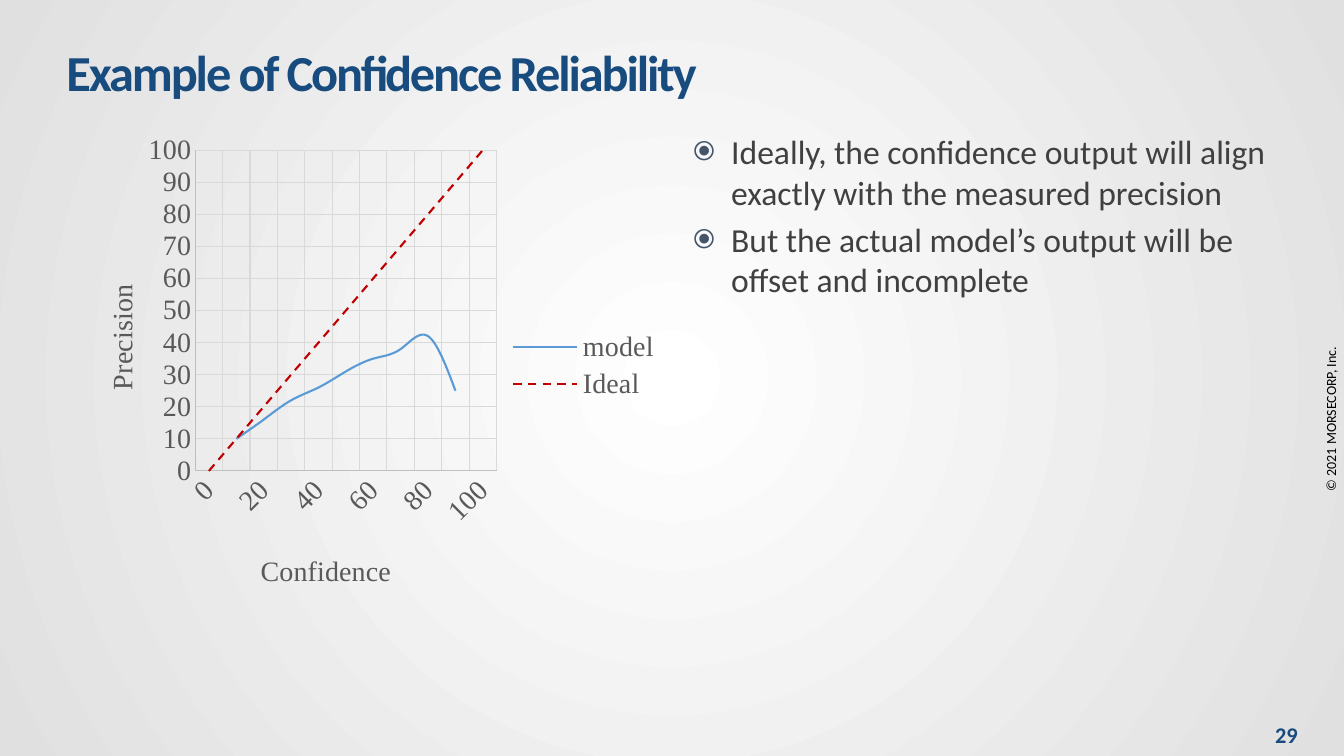
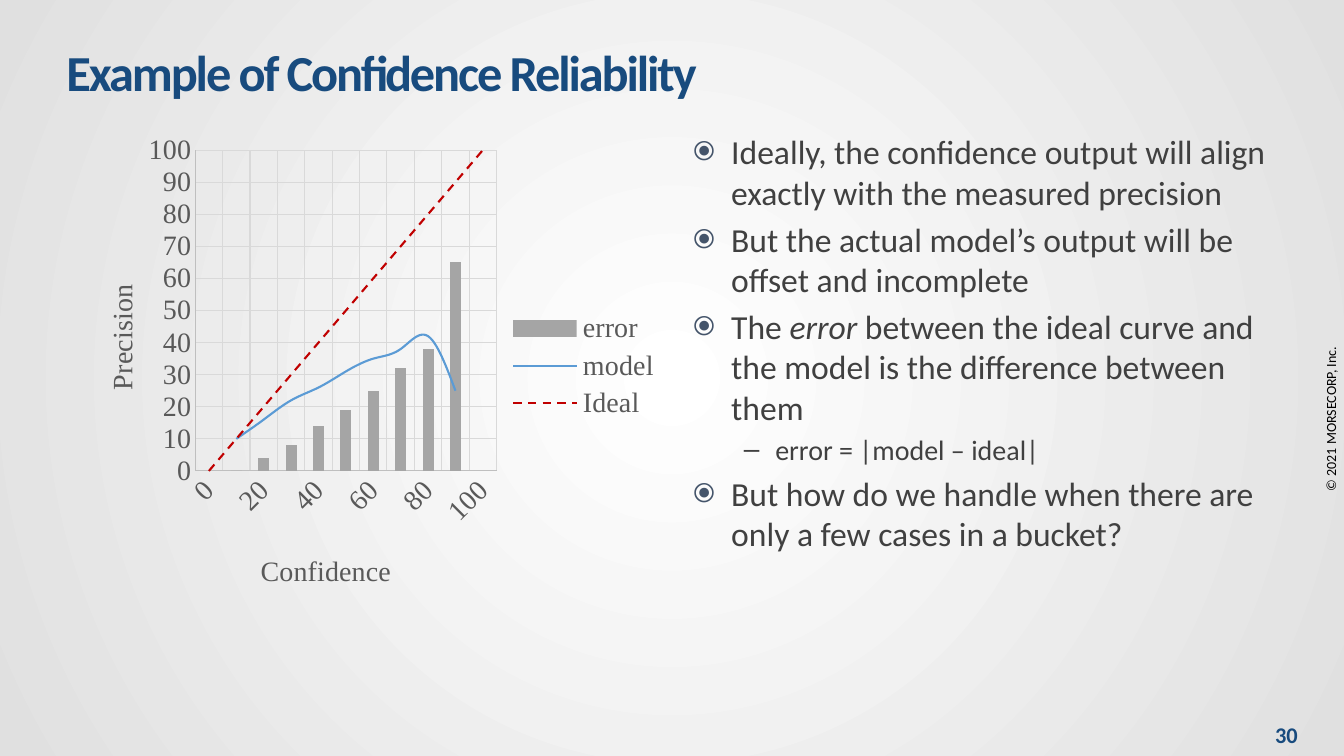
import pptx
import pptx.chart.data
import pptx.dml.color
import pptx.enum.chart
import pptx.enum.dml
import pptx.enum.text
import pptx.oxml
import pptx.oxml.ns
import pptx.util
from lxml import etree

Cm = pptx.util.Cm
Pt = pptx.util.Pt
qn = pptx.oxml.ns.qn
ALIGN = pptx.enum.text.PP_ALIGN
MIDDLE = pptx.enum.text.MSO_ANCHOR.MIDDLE

SANS = "Calibri"
SERIF = "Times New Roman"
NAVY = "184B7E"
SLATE = "44546A"
DARK = "404040"
GREY = "595959"
AXIS = "BFBFBF"
GRID = "D9D9D9"

TITLE = "Example of Confidence Reliability"
RIGHTS = "© 2021 MORSECORP, Inc."

CATS = [str(step) for step in range(0, 101, 10)]
ERROR = ("error", [None, 0, 4, 8, 14, 19, 25, 32, 38, 65, None])
MODEL = ("model", [None, 10, 16, 22, 26, 31, 35, 38, 42, 25, None])
IDEAL = ("Ideal", list(range(0, 101, 10)))
HUES = {"error": "A5A5A5", "model": "5B9BD5", "Ideal": "C00000"}

POINTS = [
    (0, "Ideally, the confidence output will align exactly with the measured precision"),
    (0, "But the actual model’s output will be offset and incomplete"),
    (0, "The *error* between the ideal curve and the model is the difference between them"),
    (1, "error = |model – ideal|"),
    (0, "But how do we handle when there are only a few cases in a bucket?"),
]

HEAD = (1.42, 0.84, 29.29, 1.9)
PLOT = (1.73, 3.18, 15.19, 12.07)
LIST = (17.22, 3.18, 15.24, 14.73)
PAGE = (31.8, 18.16, 1.24, 0.71)
SIDE = (27.23, 10.21, 12.6, 0.69)


def rgb(code):
    return pptx.dml.color.RGBColor.from_string(code)


def ink(font, size, code, face=SANS, bold=False):
    font.name = face
    font.size = Pt(size)
    font.bold = bold
    font.color.rgb = rgb(code)


def stroke(line, code, width):
    line.color.rgb = rgb(code)
    line.width = Pt(width)


def cms(box):
    return [Cm(size) for size in box]


def move(shape, box):
    shape.left, shape.top, shape.width, shape.height = cms(box)


def paint(master):
    fill = master.background.fill
    fill.gradient()
    for stop, code in zip(fill.gradient_stops, ("FFFFFF", "E0E0E0")):
        stop.color.rgb = rgb(code)
    grad = master.element.find(".//" + qn("a:gradFill"))
    grad.remove(grad.find(qn("a:lin")))
    ring = etree.SubElement(grad, qn("a:path"), path="circle")
    half = {side: "50000" for side in "ltrb"}
    etree.SubElement(ring, qn("a:fillToRect"), half)


def head(slide, box):
    shape = slide.shapes.title
    move(shape, box)
    frame = shape.text_frame
    frame.text = TITLE
    frame.vertical_anchor = MIDDLE
    frame.auto_size = pptx.enum.text.MSO_AUTO_SIZE.NONE
    para = frame.paragraphs[0]
    para.alignment = ALIGN.LEFT
    run = para.runs[0]
    ink(run.font, 36, NAVY, bold=True)
    run.font._element.set("spc", "-150")


def label(slide, box, text, size, code, bold=False, turn=0):
    shape = slide.shapes.add_textbox(*cms(box))
    shape.rotation = turn
    frame = shape.text_frame
    frame.word_wrap = True
    frame.vertical_anchor = MIDDLE
    frame.text = text
    para = frame.paragraphs[0]
    para.alignment = ALIGN.CENTER
    ink(para.runs[0].font, size, code, bold=bold)


def bullet(para):
    props = para._p.get_or_add_pPr()
    tint = etree.SubElement(props, qn("a:buClr"))
    etree.SubElement(tint, qn("a:srgbClr"), val=SLATE)
    etree.SubElement(props, qn("a:buSzPct"), val="80000")
    etree.SubElement(props, qn("a:buChar"), char="⦿")


def points(slide, box, items):
    shape = slide.placeholders[1]
    move(shape, box)
    frame = shape.text_frame
    frame.auto_size = pptx.enum.text.MSO_AUTO_SIZE.NONE
    for row, (level, text) in enumerate(items):
        para = frame.add_paragraph() if row else frame.paragraphs[0]
        para.level = level
        if level == 0:
            bullet(para)
        if row == 0:
            para.space_before = Pt(0)
        for turn, part in enumerate(text.split("*")):
            run = para.add_run()
            run.text = part
            ink(run.font, 20 if level else 24, DARK)
            run.font.italic = turn % 2 == 1


def pin(host, inner=False, **spots):
    node = host.find(qn("c:layout"))
    if node is None:
        node = etree.Element(qn("c:layout"))
        host.insert(len(host.findall(qn("c:tx"))), node)
    hold = etree.SubElement(node, qn("c:manualLayout"))
    if inner:
        etree.SubElement(hold, qn("c:layoutTarget"), val="inner")
    for key in ("x", "y"):
        etree.SubElement(hold, qn("c:" + key + "Mode"), val="edge")
    for key, spot in spots.items():
        etree.SubElement(hold, qn("c:" + key), val=str(spot))


def dress(axis, name, x, y):
    axis.major_tick_mark = pptx.enum.chart.XL_TICK_MARK.NONE
    axis.minor_tick_mark = pptx.enum.chart.XL_TICK_MARK.NONE
    axis.has_major_gridlines = True
    stroke(axis.major_gridlines.format.line, GRID, 0.75)
    stroke(axis.format.line, AXIS, 0.75)
    ink(axis.tick_labels.font, 20, GREY, SERIF)
    title = axis.axis_title
    title.text_frame.text = name
    ink(title.text_frame.paragraphs[0].runs[0].font, 20, GREY, SERIF)
    pin(title._element, x=x, y=y)


def split(area):
    lines = area.find(qn("c:lineChart"))
    bars = etree.Element(qn("c:barChart"))
    lines.addprevious(bars)
    etree.SubElement(bars, qn("c:barDir"), val="col")
    etree.SubElement(bars, qn("c:grouping"), val="clustered")
    etree.SubElement(bars, qn("c:varyColors"), val="0")
    first = lines.find(qn("c:ser"))
    for tag in ("c:marker", "c:smooth"):
        for node in first.findall(qn(tag)):
            first.remove(node)
    bars.append(first)
    etree.SubElement(bars, qn("c:gapWidth"), val="150")
    for node in lines.findall(qn("c:axId")):
        etree.SubElement(bars, qn("c:axId"), val=node.get("val"))


def graph(slide, box, rows):
    data = pptx.chart.data.CategoryChartData()
    data.categories = CATS
    for name, vals in rows:
        data.add_series(name, vals)
    kind = pptx.enum.chart.XL_CHART_TYPE.LINE
    chart = slide.shapes.add_chart(kind, *cms(box), data).chart
    ink(chart.font, 20, "000000", SERIF)
    chart.has_title = False
    chart.has_legend = True
    chart.legend.position = pptx.enum.chart.XL_LEGEND_POSITION.RIGHT
    chart.legend.include_in_layout = False
    ink(chart.legend.font, 20, GREY, SERIF)

    cat, val = chart.category_axis, chart.value_axis
    dress(cat, "Confidence", 0.31, 0.88)
    dress(val, "Precision", 0.05, 0.32)
    val.minimum_scale, val.maximum_scale, val.major_unit = 0, 100, 10
    cat._element.find(qn("c:txPr")).find(qn("a:bodyPr")).set("rot", "-2700000")
    skip = etree.Element(qn("c:tickLblSkip"), val="2")
    cat._element.find(qn("c:noMultiLvlLbl")).addprevious(skip)

    area = chart._chartSpace.find(".//" + qn("c:plotArea"))
    pin(area, True, x=0.21, y=0.05, w=0.5, h=0.67)
    chart.plots[0].vary_by_categories = False
    if rows[0] is ERROR:
        split(area)
    for plot in chart.plots:
        for row in plot.series:
            code = HUES[row.name]
            if row.name == "error":
                row.format.fill.solid()
                row.format.fill.fore_color.rgb = rgb(code)
                continue
            row.smooth = True
            stroke(row.format.line, code, 1.5)
            if row.name == "Ideal":
                row.format.line.dash_style = pptx.enum.dml.MSO_LINE.DASH


def build(deck, page, rows, items):
    slide = deck.slides.add_slide(deck.slide_layouts[1])
    label(slide, SIDE, RIGHTS, 10, "000000", turn=270)
    head(slide, HEAD)
    label(slide, PAGE, str(page), 16, NAVY, bold=True)
    graph(slide, PLOT, rows)
    points(slide, LIST, items)


def main():
    deck = pptx.Presentation()
    deck.slide_width, deck.slide_height = Cm(33.87), Cm(19.05)
    paint(deck.slide_master)
    build(deck, 29, [MODEL, IDEAL], POINTS[:2])
    build(deck, 30, [ERROR, MODEL, IDEAL], POINTS)
    deck.save("out.pptx")


if __name__ == "__main__":
    main()
